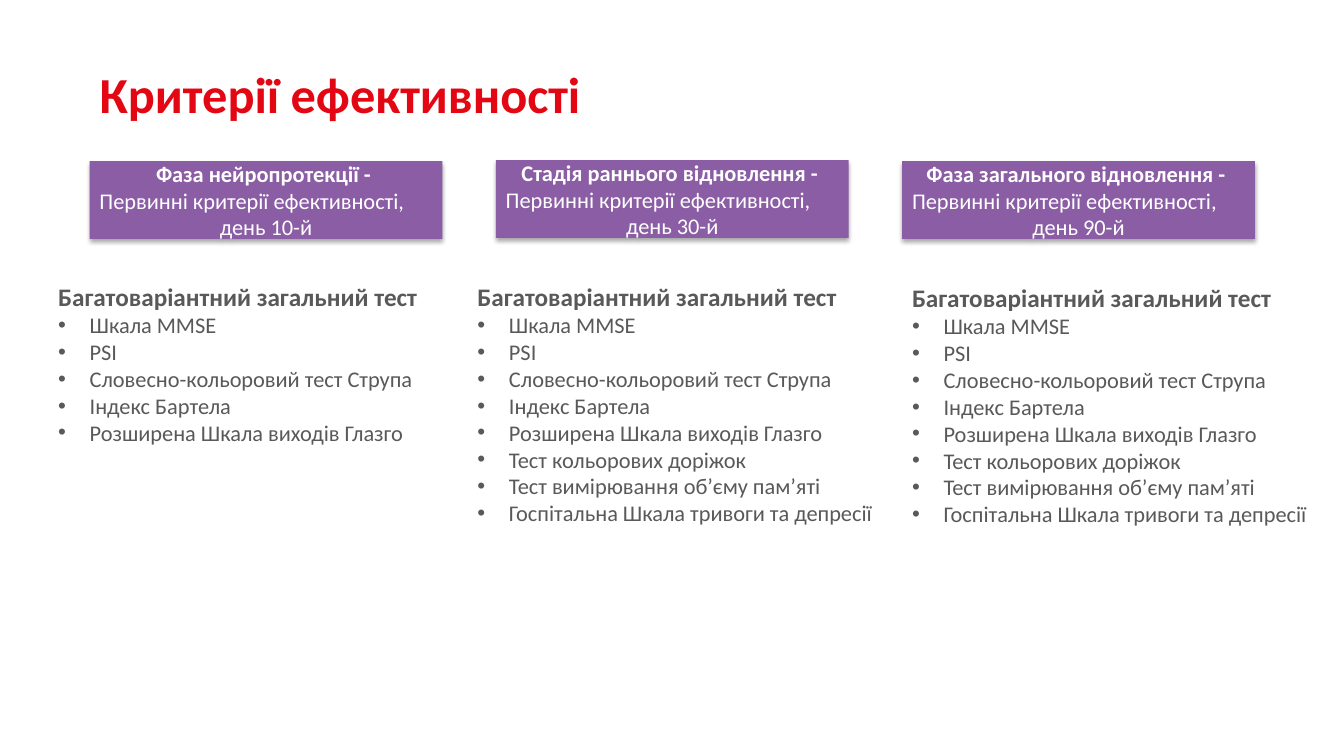
import pptx
import pptx.dml.color
import pptx.enum.shapes
import pptx.enum.text
import pptx.oxml
import pptx.oxml.ns
import pptx.util

Pt = pptx.util.Pt
Align = pptx.enum.text.PP_ALIGN
Anchor = pptx.enum.text.MSO_ANCHOR

RED, PURPLE, GREY, WHITE = "E30613", "8A5DA4", "595959", "FFFFFF"


def color(value):
    return pptx.dml.color.RGBColor.from_string(value)


def element(markup):
    namespace = pptx.oxml.ns.nsdecls("a")
    return pptx.oxml.parse_xml(markup.replace(" ", f" {namespace} ", 1))


class Page:
    font = "Calibri"
    indent = 22.5

    def __init__(self, deck):
        self.shapes = deck.slides.add_slide(deck.slide_layouts[6]).shapes

    def paragraph(self, frame, index, text, size, ink, bold=False,
                  align=Align.LEFT, bullet=False):
        para = frame.paragraphs[0] if index == 0 else frame.add_paragraph()
        para.text = text
        para.alignment = align
        if bullet:
            properties = para._p.get_or_add_pPr()
            properties.set("marL", str(Pt(self.indent)))
            properties.set("indent", str(-Pt(self.indent)))
            properties.append(element('<a:buFont typeface="Arial"/>'))
            properties.append(element('<a:buChar char="•"/>'))
        para.font.name = self.font
        para.font.size = Pt(size)
        para.font.bold = bold
        para.font.color.rgb = color(ink)

    def text_frame(self, left, top, width, height):
        box = self.shapes.add_textbox(Pt(left), Pt(top), Pt(width), Pt(height))
        box.text_frame.word_wrap = True
        return box.text_frame

    def title(self, left, top, width, height, text):
        frame = self.text_frame(left, top, width, height)
        frame.vertical_anchor = Anchor.MIDDLE
        self.paragraph(frame, 0, text, 36, RED, bold=True)

    def phase(self, left, top, width, height, name, day):
        box = self.shapes.add_shape(pptx.enum.shapes.MSO_SHAPE.RECTANGLE,
                                    Pt(left), Pt(top), Pt(width), Pt(height))
        box.fill.solid()
        box.fill.fore_color.rgb = color(PURPLE)
        box.line.fill.background()
        self.soft_shadow(box)
        frame = box.text_frame
        frame.word_wrap = True
        frame.vertical_anchor = Anchor.MIDDLE
        self.paragraph(frame, 0, f"{name} - ", 16, WHITE, True, Align.CENTER)
        self.paragraph(frame, 1, "Первинні критерії ефективності,", 16, WHITE)
        self.paragraph(frame, 2, f"день {day}-й", 16, WHITE, align=Align.CENTER)

    def soft_shadow(self, box):
        box.shadow.inherit = False
        effects = box._element.spPr.find(pptx.oxml.ns.qn("a:effectLst"))
        effects.append(element(
            f'<a:outerShdw blurRad="{Pt(3.1)}" dist="{Pt(1.8)}" dir="5400000" '
            'rotWithShape="0"><a:srgbClr val="000000"><a:alpha val="35000"/>'
            '</a:srgbClr></a:outerShdw>'))

    def tests(self, left, top, width, height, heading, items):
        frame = self.text_frame(left, top, width, height)
        self.paragraph(frame, 0, heading, 18, GREY, bold=True)
        for index, item in enumerate(items, 1):
            self.paragraph(frame, index, item, 16, GREY, bullet=True)


def main():
    deck = pptx.Presentation()
    deck.slide_width, deck.slide_height = Pt(960), Pt(540)
    page = Page(deck)

    page.title(64, 21.6, 854, 90, "Критерії ефективності")

    # Test lists: the later phases extend the first one
    early_tests = ["Шкала MMSE", "PSI", "Словесно-кольоровий тест Струпа",
                   "Індекс Бартела", "Розширена Шкала виходів Глазго"]
    all_tests = early_tests + ["Тест кольорових доріжок",
                               "Тест вимірювання об’єму пам’яті",
                               "Госпітальна Шкала тривоги та депресії"]

    # One column per phase: name, day, header top, list place and tests
    columns = [
        ("Фаза нейропротекції", 10, 115.2, (34.5, 197.3, 299.5, 191.5), early_tests),
        ("Стадія раннього відновлення", 30, 114.5, (334, 197.3, 318, 271.5), all_tests),
        ("Фаза загального відновлення", 90, 115.2, (644.4, 198, 305.3, 250), all_tests),
    ]
    for number, (name, day, top, place, items) in enumerate(columns):
        page.phase(64 + 290.2 * number, top, 252, 55.5, name, day)
        page.tests(*place, "Багатоваріантний загальний тест", items)

    deck.save("out.pptx")


if __name__ == "__main__":
    main()
